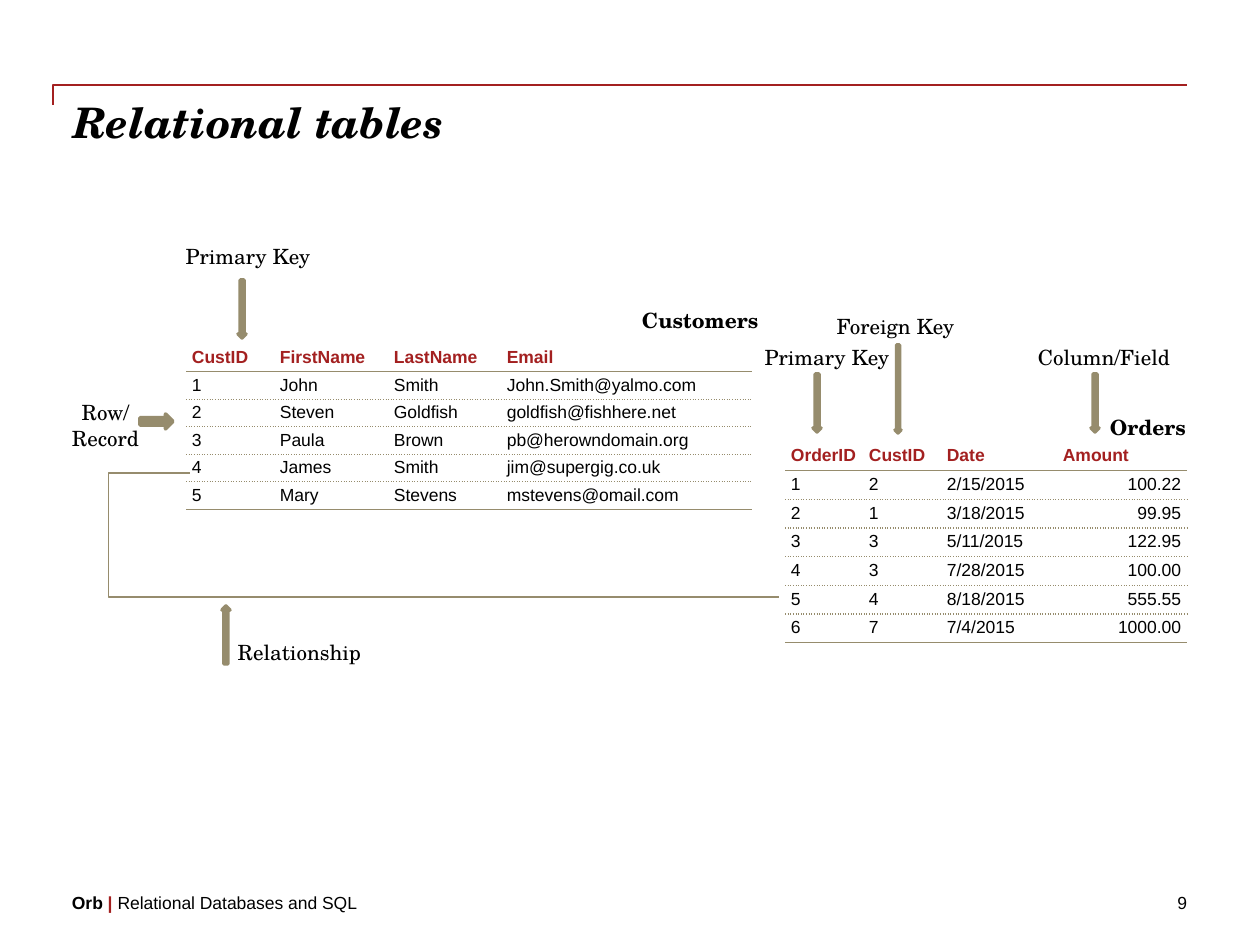
from lxml import etree
from pptx import Presentation, util as u
from pptx.dml.color import RGBColor
from pptx.enum import shapes as sh, text as tx
from pptx.oxml import parse_xml
from pptx.oxml.ns import nsdecls, qn

PX = 914400 / 126
RED, TAN, BLACK = "A32020", "968C6D", "000000"
SANS, SERIF = "Arial", "TeX Gyre Schola"
LEFT, MID, RIGHT = tx.PP_ALIGN.LEFT, tx.PP_ALIGN.CENTER, tx.PP_ALIGN.RIGHT


def px(*nums):
    return [u.Emu(round(n * PX)) for n in nums]


def write(frame, lines, size, font, align=LEFT, inset=(0, 0)):
    """Fill a frame with lines, each a list of (words, colour, bold) runs."""
    side, edge = px(*inset)
    form = dict(margin_left=side, margin_right=side, margin_top=edge,
                margin_bottom=edge, word_wrap=True,
                vertical_anchor=tx.MSO_ANCHOR.TOP)
    for key, val in form.items():
        setattr(frame, key, val)
    for i, line in enumerate(lines):
        para = frame.add_paragraph() if i else frame.paragraphs[0]
        para.alignment = align
        for words, color, bold in line:
            run = para.add_run()
            run.text = words
            for key, val in dict(size=u.Pt(size), name=font, bold=bold).items():
                setattr(run.font, key, val)
            run.font.color.rgb = RGBColor.from_string(color)


deck = Presentation()
deck.slide_width, deck.slide_height = px(1260, 945)
slide = deck.slides.add_slide(deck.slide_layouts[5])
items = slide.shapes

# Title
title = items.title
title.left, title.top, title.width, title.height = px(73, 96, 1113, 50)
write(title.text_frame, [[("Relational tables", BLACK, True)]], 24, SERIF)
title.text_frame.paragraphs[0].runs[0].font.italic = True

# Bent lines: the rule over the title, and the relationship between the tables
bends = [
    ((630, 662, 610, -472), "bentConnector2", 90, None, RED, 1),
    ((190, 473, 779, 597), "bentConnector3", 0, -13800, TAN, 0.75),
]
for ends, kind, turn, bend, color, width in bends:
    line = items.add_connector(sh.MSO_CONNECTOR.ELBOW, *px(*ends))
    line.line.color.rgb = RGBColor.from_string(color)
    line.line.width = u.Pt(width)
    props = line._element.spPr
    props.find(qn("a:xfrm")).set("rot", str(turn * 60000))
    geom = props.find(qn("a:prstGeom"))
    geom.set("prst", kind)
    if bend is not None:
        etree.SubElement(geom.find(qn("a:avLst")), qn("a:gd"),
                         name="adj1", fmla=f"val {bend}")
    etree.SubElement(props, qn("a:effectLst"))

# Tables: place, column widths, right-aligned columns, rows
tables = [
    ((186, 344, 566, 162), (88, 114, 113, 251), (), [
        "CustID FirstName LastName Email",
        "1 John Smith John.Smith@yalmo.com",
        "2 Steven Goldfish goldfish@fishhere.net",
        "3 Paula Brown pb@herowndomain.org",
        "4 James Smith jim@supergig.co.uk",
        "5 Mary Stevens mstevens@omail.com"]),
    ((785, 442, 402, 201), (78, 78, 116, 130), (3,), [
        "OrderID CustID Date Amount",
        "1 2 2/15/2015 100.22",
        "2 1 3/18/2015 99.95",
        "3 3 5/11/2015 122.95",
        "4 3 7/28/2015 100.00",
        "5 4 8/18/2015 555.55",
        "6 7 7/4/2015 1000.00"]),
]
for place, widths, sums, rows in tables:
    last = len(rows) - 1
    grid = items.add_table(len(rows), len(widths), *px(*place)).table
    grid.horz_banding = False
    for col, width in zip(grid.columns, px(*widths)):
        col.width = width
    for r, row in enumerate(rows):
        for c, words in enumerate(row.split()):
            cell = grid.cell(r, c)
            head = r == 0
            cell.fill.background()
            write(cell.text_frame, [[(words, RED if head else BLACK, head)]],
                  10, SANS, RIGHT if c in sums and not head else LEFT)
            cell.margin_left = cell.margin_right = px(6)[0]
            cell.margin_top = cell.margin_bottom = px(4)[0]
            dash = {"T": "solid" if r == 1 else "sysDot",
                    "B": "solid" if r in (0, last) else "sysDot"}
            if head:
                del dash["T"]
            props = cell._tc.get_or_add_tcPr()
            for i, side in enumerate("LRTB"):
                ink = "<a:noFill/>"
                if side in dash:
                    ink = (f'<a:solidFill><a:srgbClr val="{TAN}"/></a:solidFill>'
                           f'<a:prstDash val="{dash[side]}"/>')
                props.insert(i, parse_xml(
                    f'<a:ln{side} {nsdecls("a")} w="9525">{ink}</a:ln{side}>'))

# Arrows: unturned box and turn in degrees
arrows = [
    ((140, 414, 33, 15), 0),
    ((1066, 399, 58, 8), 90),
    ((854, 386, 88, 6), 90),
    ((213, 305, 58, 8), 90),
    ((788, 399, 58, 8), 90),
    ((197, 631, 58, 8), 270),
]
for place, turn in arrows:
    arrow = items.add_shape(sh.MSO_SHAPE.RIGHT_ARROW, *px(*place))
    arrow.rotation = turn
    arrow.shadow.inherit = False
    arrow.fill.solid()
    arrow.fill.fore_color.rgb = RGBColor.from_string(TAN)
    arrow.line.color.rgb = RGBColor.from_string(TAN)
    arrow.line.width = u.Pt(2)

# Labels
labels = [
    ("Customers", (642, 308, 128, 25), True, LEFT),
    ("Orders", (1110, 415, 95, 25), True, LEFT),
    ("Row/\nRecord", (49, 400, 113, 50), False, MID),
    ("Primary Key", (184, 244, 128, 25), False, MID),
    ("Primary Key", (763, 345, 128, 25), False, MID),
    ("Foreign Key", (828, 314, 135, 25), False, MID),
    ("Column/Field", (1033, 345, 142, 25), False, MID),
    ("Relationship", (229, 640, 141, 25), False, MID),
]
for words, place, bold, align in labels:
    box = items.add_textbox(*px(*place))
    write(box.text_frame, [[(part, BLACK, bold)] for part in words.split("\n")],
          12, SERIF, align)

# Footer
foot = items.add_textbox(*px(72, 892, 905, 22))
write(foot.text_frame, [[("Orb", BLACK, True), (" | ", RED, True),
                         ("Relational Databases and SQL", BLACK, False)]], 10, SANS)
page = items.add_textbox(*px(977, 892, 210, 22))
write(page.text_frame, [[("9", BLACK, False)]], 10, SANS, RIGHT)

deck.save("out.pptx")
